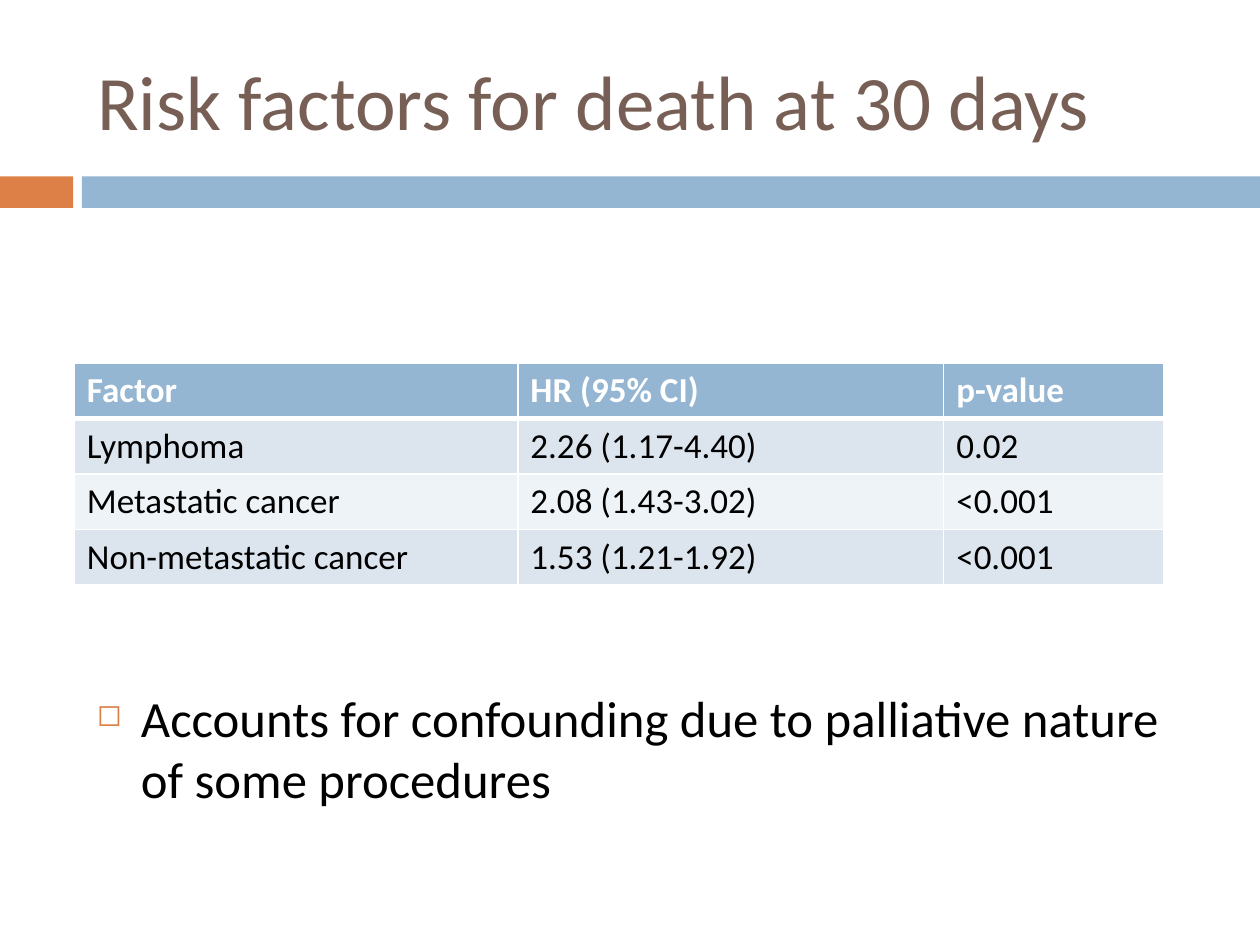
from dataclasses import dataclass

from lxml.etree import SubElement
from pptx import Presentation
from pptx.dml.color import RGBColor
from pptx.enum.shapes import MSO_SHAPE
from pptx.enum.text import MSO_ANCHOR, PP_ALIGN
from pptx.oxml import parse_xml
from pptx.oxml.ns import nsdecls, qn
from pptx.util import Inches, Pt

TITLE = "Risk factors for death at 30 days"
RISK_FACTORS = [
    ("Factor", "HR (95% CI)", "p-value"),
    ("Lymphoma", "2.26 (1.17-4.40)", "0.02"),
    ("Metastatic cancer", "2.08 (1.43-3.02)", "<0.001"),
    ("Non-metastatic cancer", "1.53 (1.21-1.92)", "<0.001"),
]
NOTE = "Accounts for confounding due to palliative nature of some procedures"


@dataclass(frozen=True)
class Theme:
    font: str = "Calibri"
    brown: str = "775F55"
    orange: str = "DD8047"
    blue: str = "94B6D2"
    bands: tuple = ("DCE5EE", "EEF3F7")
    white: str = "FFFFFF"
    black: str = "000000"
    title_size: float = 44
    table_size: float = 20
    note_size: float = 29


THEME = Theme()
SLIDE_WIDTH, SLIDE_HEIGHT = 10, 7.5
TEXT_LEFT, TEXT_WIDTH = 0.67, 8.92
BAND_TOP, BAND_HEIGHT = 1.4, 0.25
BAND_SPANS = [(0, 0.58, THEME.orange), (0.65, SLIDE_WIDTH, THEME.blue)]
TABLE_LEFT, TABLE_TOP = 0.59, 2.88
COLUMN_WIDTHS = (3.52, 3.38, 1.75)
ROW_HEIGHT = 0.44
BULLET_INDENT = 0.35


def box(left, top, width, height):
    return [Inches(length) for length in (left, top, width, height)]


def format_text(frame, size, color, bold=False):
    for paragraph in frame.paragraphs:
        paragraph.alignment = PP_ALIGN.LEFT
        for run in paragraph.runs:
            run.font.name = THEME.font
            run.font.size = Pt(size)
            run.font.bold = bold
            run.font.color.rgb = RGBColor.from_string(color)


def add_title(slide):
    title = slide.shapes.title
    title.left, title.top, title.width, title.height = box(TEXT_LEFT, 0.25, TEXT_WIDTH, 1.08)
    title.text_frame.text = TITLE
    title.text_frame.vertical_anchor = MSO_ANCHOR.MIDDLE
    format_text(title.text_frame, THEME.title_size, THEME.brown)


def add_bands(slide):
    for start, end, color in BAND_SPANS:
        band = slide.shapes.add_shape(
            MSO_SHAPE.RECTANGLE, *box(start, BAND_TOP, end - start, BAND_HEIGHT))
        band.shadow.inherit = False
        band.fill.solid()
        band.fill.fore_color.rgb = RGBColor.from_string(color)
        band.line.fill.background()


def set_borders(cell, top, bottom):
    """Draw white cell borders, 1 pt at the sides; top and bottom are in points."""
    properties = cell._tc.get_or_add_tcPr()
    for index, (side, width) in enumerate(zip("LRTB", (1, 1, top, bottom))):
        properties.insert(index, parse_xml(
            f'<a:ln{side} {nsdecls("a")} w="{Pt(width)}"><a:solidFill>'
            f'<a:srgbClr val="{THEME.white}"/></a:solidFill></a:ln{side}>'))


def add_risk_table(slide):
    row_count = len(RISK_FACTORS)
    table = slide.shapes.add_table(
        row_count, len(COLUMN_WIDTHS),
        *box(TABLE_LEFT, TABLE_TOP, sum(COLUMN_WIDTHS), row_count * ROW_HEIGHT)).table
    for column, width in zip(table.columns, COLUMN_WIDTHS):
        column.width = Inches(width)
    for row, values in enumerate(RISK_FACTORS):
        header = row == 0
        fill = THEME.blue if header else THEME.bands[(row - 1) % 2]
        for column, value in enumerate(values):
            cell = table.cell(row, column)
            cell.text_frame.text = value
            cell.fill.solid()
            cell.fill.fore_color.rgb = RGBColor.from_string(fill)
            format_text(cell.text_frame, THEME.table_size,
                        THEME.white if header else THEME.black, bold=header)
            set_borders(cell, top=3 if row == 1 else 1, bottom=3 if header else 1)


def add_bullet(paragraph):
    properties = paragraph._p.get_or_add_pPr()
    properties.set("marL", str(Inches(BULLET_INDENT)))
    properties.set("indent", str(-Inches(BULLET_INDENT)))
    bullet_color = SubElement(properties, qn("a:buClr"))
    SubElement(bullet_color, qn("a:srgbClr"), val=THEME.orange)
    SubElement(properties, qn("a:buSzPct"), val="60000")
    SubElement(properties, qn("a:buChar"), char="◻")


def add_note(slide):
    frame = slide.shapes.add_textbox(*box(TEXT_LEFT, 5.4, TEXT_WIDTH, 1.26)).text_frame
    frame.word_wrap = True
    frame.text = NOTE
    format_text(frame, THEME.note_size, THEME.black)
    frame.paragraphs[0].space_before = Pt(7)
    add_bullet(frame.paragraphs[0])


def main():
    presentation = Presentation()
    presentation.slide_width = Inches(SLIDE_WIDTH)
    presentation.slide_height = Inches(SLIDE_HEIGHT)
    slide = presentation.slides.add_slide(presentation.slide_layouts.get_by_name("Title Only"))
    add_bands(slide)
    add_title(slide)
    add_risk_table(slide)
    add_note(slide)
    presentation.save("out.pptx")


if __name__ == "__main__":
    main()
